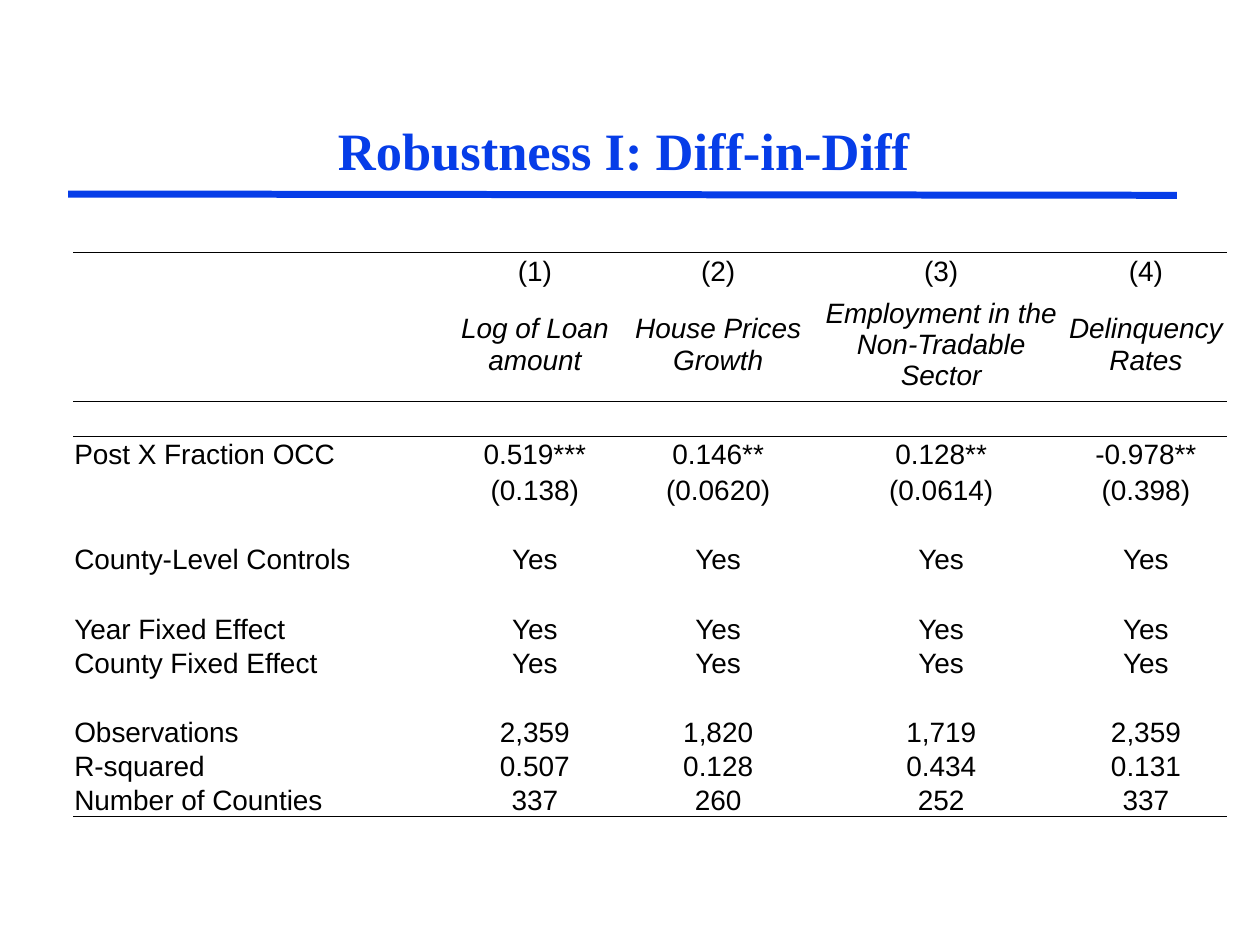
from dataclasses import dataclass

from lxml.etree import SubElement
from pptx import Presentation
from pptx.dml.color import RGBColor
from pptx.enum.shapes import MSO_CONNECTOR
from pptx.enum.text import MSO_ANCHOR, PP_ALIGN
from pptx.oxml.ns import qn
from pptx.util import Inches, Pt

# Content
TITLE = "Robustness I: Diff-in-Diff"
BLANK = ("",) * 5
ROWS = [
    ("", "(1)", "(2)", "(3)", "(4)"),
    ("", "Log of Loan amount", "House Prices Growth",
     "Employment in the Non-Tradable Sector", "Delinquency Rates"),
    BLANK,
    ("Post X Fraction OCC", "0.519***", "0.146**", "0.128**", "-0.978**"),
    ("", "(0.138)", "(0.0620)", "(0.0614)", "(0.398)"),
    BLANK,
    ("County-Level Controls",) + ("Yes",) * 4,
    BLANK,
    ("Year Fixed Effect",) + ("Yes",) * 4,
    ("County Fixed Effect",) + ("Yes",) * 4,
    BLANK,
    ("Observations", "2,359", "1,820", "1,719", "2,359"),
    ("R-squared", "0.507", "0.128", "0.434", "0.131"),
    ("Number of Counties", "337", "260", "252", "337"),
]
HEADING_ROW = 1
RULES = {0: ("a:lnT",), HEADING_ROW: ("a:lnB",), 2: ("a:lnT",),
         len(ROWS) - 1: ("a:lnB",)}

# Layout in inches
COLUMN_WIDTHS = (3, 1.33, 1.58, 1.96, 1.29)
ROW_HEIGHT, HEADING_HEIGHT = 0.27, 0.9
TABLE_LEFT, TABLE_TOP = 0.58, 2
NO_STYLE_NO_GRID = "{2D5ABB26-0587-4C30-8999-92F81FD0307C}"


@dataclass(frozen=True)
class Theme:
    accent: RGBColor = RGBColor(0x06, 0x3D, 0xE8)
    ink: RGBColor = RGBColor(0, 0, 0)
    title_font: str = "Times New Roman"
    body_font: str = "Arial"
    title_size: int = 30
    body_size: int = 16
    title_rule: float = 4
    table_rule: float = 0.5


THEME = Theme()


def add_span(para, text, font, size, color, bold=False, italic=False):
    span = para.add_run()
    span.text = text
    span.font.name, span.font.size = font, Pt(size)
    span.font.color.rgb = color
    span.font.bold, span.font.italic = bold, italic


def add_title(page):
    box = page.shapes.title
    box.left, box.top, box.width, box.height = map(Inches, (0.57, 0.28, 8.76, 1.21))
    frame = box.text_frame
    frame.vertical_anchor = MSO_ANCHOR.BOTTOM
    para = frame.paragraphs[0]
    para.alignment = PP_ALIGN.CENTER
    add_span(para, TITLE, THEME.title_font, THEME.title_size, THEME.accent, bold=True)


def add_title_rule(page):
    rule = page.shapes.add_connector(
        MSO_CONNECTOR.STRAIGHT, *map(Inches, (0.54, 1.54, 9.34, 1.55)))
    rule.line.color.rgb = THEME.accent
    rule.line.width = Pt(THEME.title_rule)
    SubElement(rule._element.spPr, qn("a:effectLst"))


def add_border(cell, side):
    line = SubElement(cell._tc.get_or_add_tcPr(), qn(side), w=str(Pt(THEME.table_rule)))
    fill = SubElement(line, qn("a:solidFill"))
    SubElement(fill, qn("a:srgbClr"), val=str(THEME.ink))


def fill_cell(cell, text, row, column):
    heading = row == HEADING_ROW
    cell.margin_left = cell.margin_top = cell.margin_right = Inches(0.01)
    cell.margin_bottom = 0
    cell.vertical_anchor = MSO_ANCHOR.MIDDLE if heading else MSO_ANCHOR.BOTTOM
    for side in RULES.get(row, ()):
        add_border(cell, side)
    cell.fill.background()
    para = cell.text_frame.paragraphs[0]
    para.alignment = PP_ALIGN.CENTER if column else PP_ALIGN.LEFT
    if text:
        add_span(para, text, THEME.body_font, THEME.body_size, THEME.ink, italic=heading)
    else:
        # Keeps an empty row as low as a row with text
        SubElement(para._p, qn("a:endParaRPr"), sz=str(THEME.body_size * 100))


def add_results(page):
    heights = [HEADING_HEIGHT if row == HEADING_ROW else ROW_HEIGHT
               for row in range(len(ROWS))]
    frame = page.shapes.add_table(
        len(ROWS), len(COLUMN_WIDTHS), Inches(TABLE_LEFT), Inches(TABLE_TOP),
        Inches(sum(COLUMN_WIDTHS)), Inches(sum(heights)))
    table = frame.table
    table.first_row = table.horz_banding = False
    table._tbl.tblPr.find(qn("a:tableStyleId")).text = NO_STYLE_NO_GRID
    for column, width in zip(table.columns, COLUMN_WIDTHS):
        column.width = Inches(width)
    for row, height in zip(table.rows, heights):
        row.height = Inches(height)
    for row, texts in enumerate(ROWS):
        for column, text in enumerate(texts):
            fill_cell(table.cell(row, column), text, row, column)


def main():
    deck = Presentation()
    deck.slide_width, deck.slide_height = Inches(10), Inches(7.5)
    page = deck.slides.add_slide(deck.slide_layouts.get_by_name("Title Only"))
    add_title_rule(page)
    add_title(page)
    add_results(page)
    deck.save("out.pptx")


if __name__ == "__main__":
    main()
